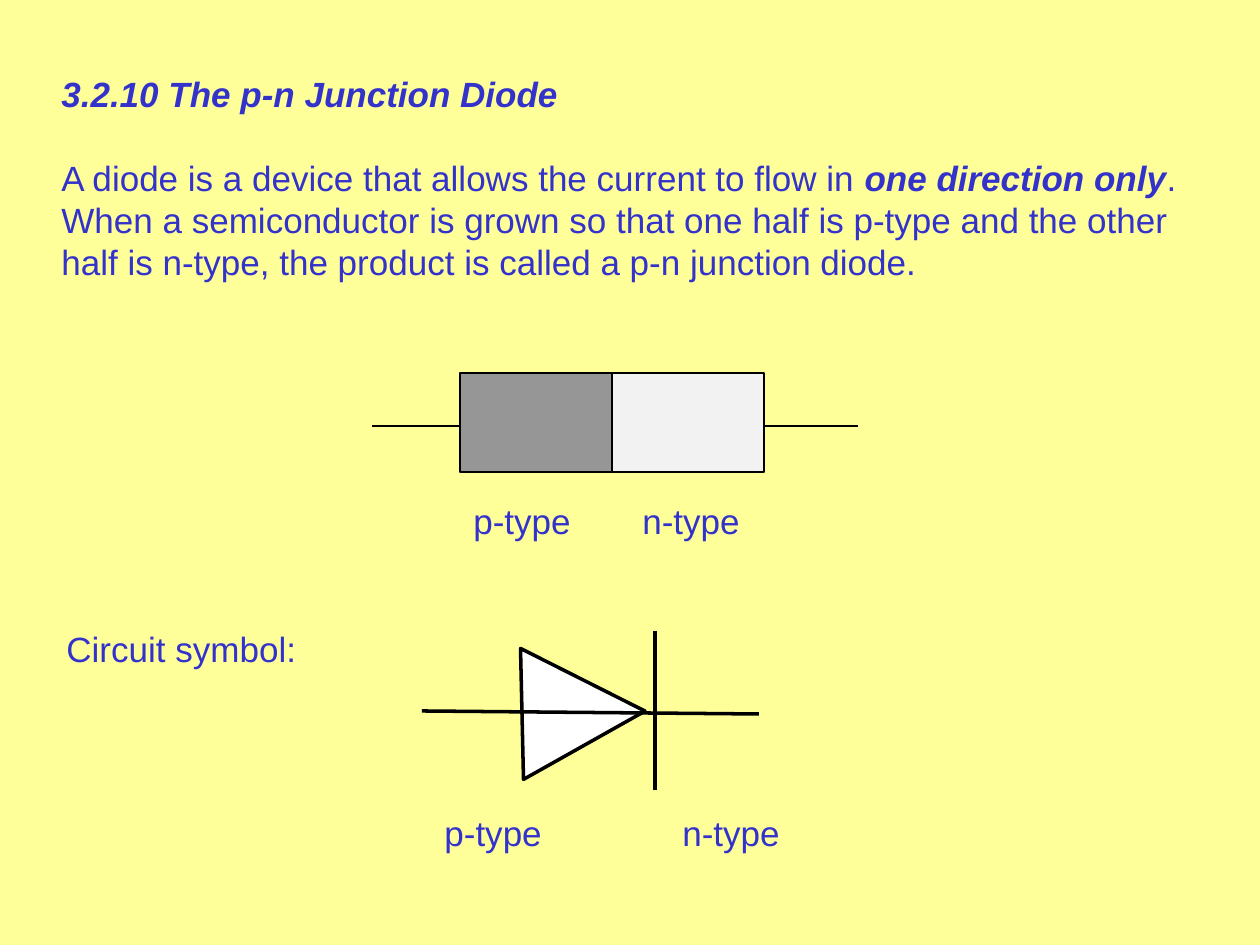
from dataclasses import dataclass

from lxml import etree
from pptx import Presentation
from pptx import util as u
from pptx.dml.color import RGBColor
from pptx.enum import shapes, text
from pptx.oxml.ns import qn

SCALE = 914400 / 126  # EMU in one px


@dataclass(frozen=True)
class Theme:
    back: str = "FFFF99"
    ink: str = "3333CC"
    line: str = "000000"
    p_fill: str = "969696"
    n_fill: str = "F2F2F2"
    sign: str = "FFFFFF"
    font: str = "Arial"
    size: int = 20
    lead: int = 24


@dataclass(frozen=True)
class Box:
    x: int
    y: int
    w: int
    h: int


@dataclass(frozen=True)
class Part:
    kind: shapes.MSO_SHAPE
    box: Box
    fill: str
    line: float
    turn: float = 0


@dataclass(frozen=True)
class Wire:
    x1: int
    y1: int
    x2: int
    y2: int
    line: float


@dataclass(frozen=True)
class Label:
    words: str
    box: Box


THEME = Theme()
RECT = shapes.MSO_SHAPE.RECTANGLE
TOP, HALF = 373, 152  # top edge and half width of the diode body
LEFT = 460
TAG_W, TAG_H = 149, 54

LEADS = Wire(372, 426, 858, 426, 0.75)
HALVES = [
    Part(RECT, Box(LEFT, TOP, HALF, 99), THEME.p_fill, 0.75),
    Part(RECT, Box(LEFT + HALF, TOP, HALF, 99), THEME.n_fill, 1),
]
BODY_TAGS = [
    Label("p-type", Box(461, 493, TAG_W, TAG_H)),
    Label("n-type", Box(630, 493, TAG_W, TAG_H)),
]
ARROW = Part(shapes.MSO_SHAPE.ISOSCELES_TRIANGLE, Box(518, 651, 131, 123),
             THEME.sign, 2, 88.7)
SIGN_WIRES = [Wire(422, 711, 759, 714, 2), Wire(655, 631, 655, 790, 2)]
SIGN_TAGS = [
    Label("p-type", Box(432, 805, TAG_W, TAG_H)),
    Label("n-type", Box(670, 805, TAG_W, TAG_H)),
    Label("Circuit symbol:", Box(54, 621, 338, TAG_H)),
]


def px(n: int) -> u.Emu:
    return u.Emu(round(n * SCALE))


def place(box: Box) -> tuple:
    return px(box.x), px(box.y), px(box.w), px(box.h)


def rgb(code: str) -> RGBColor:
    return RGBColor.from_string(code)


def add_run(para, words: str, *, strong: bool = False) -> None:
    """Add a run; strong means bold and italic."""
    run = para.add_run()
    run.text = words
    font = run.font
    font.name, font.size = THEME.font, u.Pt(THEME.size)
    font.bold = font.italic = strong
    font.color.rgb = rgb(THEME.ink)


def add_text(host, box: Box, paras: list, *, gaps: tuple = ()) -> None:
    """Each paragraph is a list of (words, strong); gaps holds space before in pt."""
    frame = host.add_textbox(*place(box)).text_frame
    frame.word_wrap = True
    frame.auto_size = text.MSO_AUTO_SIZE.SHAPE_TO_FIT_TEXT
    for i, runs in enumerate(paras):
        para = frame.paragraphs[0] if i == 0 else frame.add_paragraph()
        para.line_spacing = u.Pt(THEME.lead)
        para.space_before = u.Pt(gaps[i] if i < len(gaps) else 0)
        for words, strong in runs:
            add_run(para, words, strong=strong)


def add_tag(host, tag: Label) -> None:
    add_text(host, tag.box, [[(tag.words, False)]])


def add_part(host, part: Part) -> None:
    shape = host.add_shape(part.kind, *place(part.box))
    shape.shadow.inherit = False
    shape.rotation = part.turn
    shape.fill.solid()
    shape.fill.fore_color.rgb = rgb(part.fill)
    shape.line.color.rgb = rgb(THEME.line)
    shape.line.width = u.Pt(part.line)


def add_wire(host, wire: Wire) -> None:
    line = host.add_connector(shapes.MSO_CONNECTOR.STRAIGHT,
                              px(wire.x1), px(wire.y1), px(wire.x2), px(wire.y2))
    line.line.color.rgb = rgb(THEME.line)
    line.line.width = u.Pt(wire.line)
    etree.SubElement(line._element.spPr, qn("a:effectLst"))


def main() -> None:
    deck = Presentation()
    deck.slide_width, deck.slide_height = px(1260), px(945)
    slide = deck.slides.add_slide(deck.slide_layouts[6])
    slide.background.fill.solid()
    slide.background.fill.fore_color.rgb = rgb(THEME.back)

    add_text(slide.shapes, Box(49, 66, 1186, 223), [
        [("3.2.10 The p-n Junction Diode", True)],
        [("A diode is a device that allows the current to flow in ", False),
         ("one direction only", True), (".", False)],
        [("When a semiconductor is grown so that one half is p-type and the "
          "other half is n-type, the product is called a p-n junction diode.",
          False)],
    ], gaps=(0, THEME.lead))

    body = slide.shapes.add_group_shape().shapes
    add_wire(body, LEADS)
    for half in HALVES:
        add_part(body, half)
    for tag in BODY_TAGS:
        add_tag(body, tag)

    sign = slide.shapes.add_group_shape().shapes
    add_part(sign, ARROW)
    for wire in SIGN_WIRES:
        add_wire(sign, wire)
    for tag in SIGN_TAGS:
        add_tag(sign, tag)

    deck.save("out.pptx")


if __name__ == "__main__":
    main()
